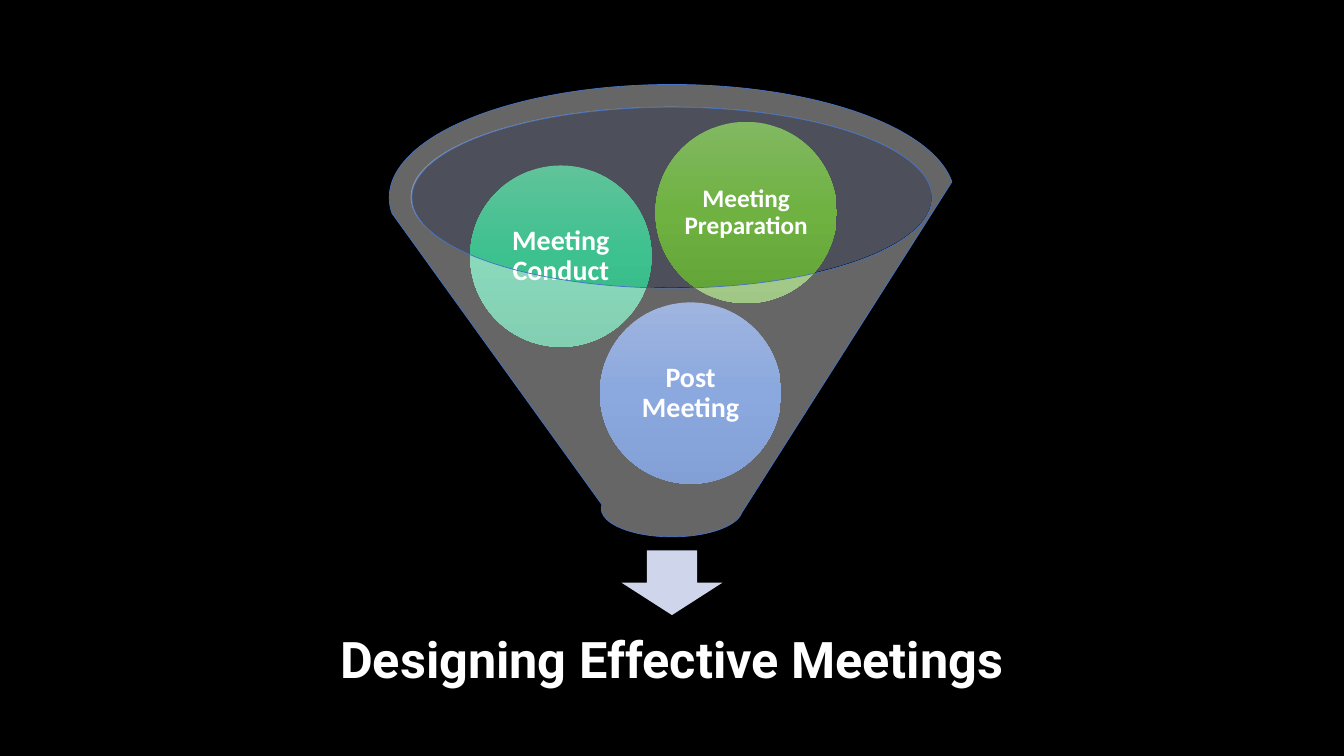
from copy import deepcopy

from lxml import etree
from pptx import Presentation
from pptx.dml.color import RGBColor
from pptx.enum.shapes import MSO_SHAPE as Shape
from pptx.enum.text import MSO_ANCHOR as Anchor, PP_ALIGN as Align
from pptx.oxml.ns import qn
from pptx.util import Cm, Pt

BLACK = RGBColor(0x00, 0x00, 0x00)
WHITE = RGBColor(0xFF, 0xFF, 0xFF)
MOUTH = RGBColor(0xC1, 0xC9, 0xE4)
RIM = RGBColor(0x44, 0x72, 0xC4)
ARROW = RGBColor(0xCF, 0xD5, 0xEA)
BLUES = (RGBColor(0x61, 0x83, 0xCB), RGBColor(0x3E, 0x70, 0xCA), RGBColor(0x30, 0x62, 0xBB))
TEALS = (RGBColor(0x60, 0xC3, 0x9A), RGBColor(0x3D, 0xC1, 0x8F), RGBColor(0x31, 0xB0, 0x80))
GREENS = (RGBColor(0x81, 0xB8, 0x61), RGBColor(0x6F, 0xB2, 0x42), RGBColor(0x62, 0xA3, 0x36))

SLIDE_W, SLIDE_H = 33.87, 19.05
BALL_SIZE = 4.57
# Label, offset in the funnel, font size, gradient
BALLS = [
    ("Post Meeting", 5.31, 5.49, 20, BLUES),
    ("Meeting Conduct", 2.04, 2.04, 20, TEALS),
    ("Meeting Preparation", 6.71, 0.94, 18, GREENS),
]


def add_plain(slide, kind, left, top, width, height):
    part = slide.shapes.add_shape(kind, Cm(left), Cm(top), Cm(width), Cm(height))
    part.shadow.inherit = False
    part.line.fill.background()
    return part


def fill_solid(part, color, opacity=100):
    part.fill.solid()
    part.fill.fore_color.rgb = color
    if opacity < 100:
        rgb = part.element.spPr.find(qn("a:solidFill"))[0]
        etree.SubElement(rgb, qn("a:alpha")).set("val", str(opacity * 1000))


def fill_gradient(part, colors):
    part.fill.gradient()
    part.fill.gradient_angle = 270
    stop_list = part.element.spPr.find(qn("a:gradFill")).find(qn("a:gsLst"))
    stop_list.append(deepcopy(stop_list[-1]))
    for index, (stop, color) in enumerate(zip(part.fill.gradient_stops, colors)):
        stop.position = index / 2
        stop.color.rgb = color


def write_label(part, label, font, size, inset):
    frame = part.text_frame
    frame.text = label
    frame.word_wrap = True
    frame.vertical_anchor = Anchor.MIDDLE
    frame.margin_left = frame.margin_right = Cm(inset)
    frame.margin_top = frame.margin_bottom = Cm(inset)
    paragraph = frame.paragraphs[0]
    paragraph.alignment = Align.CENTER
    paragraph.line_spacing = 0.9
    letters = paragraph.runs[0].font
    letters.name, letters.size, letters.bold = font, Pt(size), True
    letters.color.rgb = WHITE


def add_funnel(slide, left, top, width, height):
    # Tinted mouth behind the balls
    mouth = add_plain(slide, Shape.OVAL, left + 0.54, top + 0.56, width - 1.12, 4.55)
    fill_solid(mouth, MOUTH, 40)

    # Balls dropping into the funnel, with no inset so the longest word fits
    for label, dx, dy, size, colors in BALLS:
        ball = add_plain(slide, Shape.OVAL, left + dx, top + dy, BALL_SIZE, BALL_SIZE)
        fill_gradient(ball, colors)
        write_label(ball, label, "Calibri", size, 0)

    # Translucent funnel wall in front
    wall = add_plain(slide, Shape.FUNNEL, left, top, width, height)
    fill_solid(wall, WHITE, 40)
    wall.line.color.rgb = RIM
    wall.line.width = Pt(0.5)


def add_outcome(slide, left, top, width, height):
    # Arrow centred above the outcome
    arrow_w = 2.54
    arrow = add_plain(slide, Shape.DOWN_ARROW, left + (width - arrow_w) / 2, top, arrow_w, 1.63)
    fill_solid(arrow, ARROW)

    # Outcome text
    drop = 1.29
    outcome = slide.shapes.add_textbox(Cm(left), Cm(top + drop), Cm(width), Cm(height - drop))
    write_label(outcome, "Designing Effective Meetings", "Roboto", 36, 0.71)


def main():
    deck = Presentation()
    deck.slide_width, deck.slide_height = Cm(SLIDE_W), Cm(SLIDE_H)
    slide = deck.slides.add_slide(deck.slide_layouts[6])
    slide.background.fill.solid()
    slide.background.fill.fore_color.rgb = BLACK

    funnel_w, outcome_w = 14.25, 19.61
    add_funnel(slide, (SLIDE_W - funnel_w) / 2, 2.13, funnel_w, 11.4)
    add_outcome(slide, (SLIDE_W - outcome_w) / 2, 13.87, outcome_w, 4.34)
    deck.save("out.pptx")


if __name__ == "__main__":
    main()
